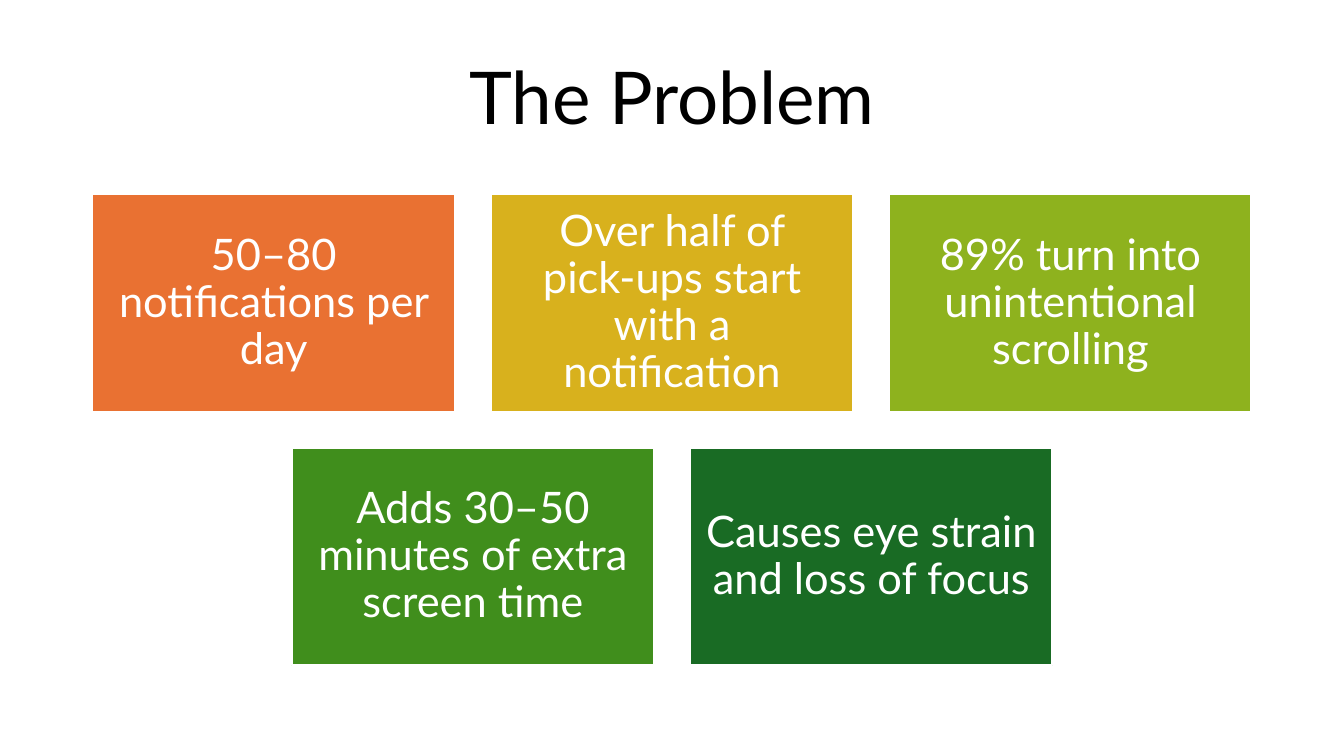
from pptx import Presentation
from pptx.dml.color import RGBColor
from pptx.enum.shapes import MSO_SHAPE as Shape
from pptx.enum.text import MSO_ANCHOR as Anchor, PP_ALIGN as Align
from pptx.util import Cm, Pt

BLACK = RGBColor(0x00, 0x00, 0x00)
WHITE = RGBColor(0xFF, 0xFF, 0xFF)
ORANGE = RGBColor(0xE9, 0x71, 0x32)
GOLD = RGBColor(0xD8, 0xB1, 0x1D)
LIME = RGBColor(0x8E, 0xB2, 0x1E)
GREEN = RGBColor(0x40, 0x8E, 0x1C)
DARK_GREEN = RGBColor(0x19, 0x6B, 0x24)

SLIDE_WIDTH, SLIDE_HEIGHT = 33.87, 19.05
CARD_WIDTH, CARD_HEIGHT, CARD_GAP = 9.13, 5.48, 0.91
CARDS_TOP = 4.9

PROBLEM_ROWS = [
    [
        ("50–80 notifications per day", ORANGE),
        ("Over half of pick‑ups start with a notification", GOLD),
        ("89% turn into unintentional scrolling", LIME),
    ],
    [
        ("Adds 30–50 minutes of extra screen time", GREEN),
        ("Causes eye strain and loss of focus", DARK_GREEN),
    ],
]


class ProblemSlide:
    """Holds the text style and the slide being filled."""

    font_name = "Lato"
    line_spacing = 0.9

    def __init__(self, slide):
        self.slide = slide

    def set_text(self, frame, text, *, size, color, margin):
        """Fill a text frame with one centred paragraph."""
        frame.word_wrap = True
        frame.vertical_anchor = Anchor.MIDDLE
        frame.margin_left = frame.margin_right = Cm(margin)
        frame.margin_top = frame.margin_bottom = Cm(margin)
        paragraph = frame.paragraphs[0]
        paragraph.alignment = Align.CENTER
        paragraph.line_spacing = self.line_spacing
        run = paragraph.add_run()
        run.text = text
        run.font.name = self.font_name
        run.font.size = Pt(size)
        run.font.color.rgb = color

    def title(self, text, left, top, width, height):
        heading = self.slide.shapes.add_textbox(
            Cm(left), Cm(top), Cm(width), Cm(height))
        self.set_text(heading.text_frame, text, size=52, color=BLACK, margin=0.2)

    def card(self, text, color, left, top):
        card = self.slide.shapes.add_shape(
            Shape.RECTANGLE, Cm(left), Cm(top), Cm(CARD_WIDTH), Cm(CARD_HEIGHT))
        card.shadow.inherit = False
        card.fill.solid()
        card.fill.fore_color.rgb = color
        card.line.color.rgb = WHITE
        card.line.width = Pt(1.5)
        self.set_text(card.text_frame, text, size=31, color=WHITE, margin=0.33)

    def card_row(self, problems, top):
        """Place a row of cards centred on the slide."""
        pitch = CARD_WIDTH + CARD_GAP
        left = (SLIDE_WIDTH - len(problems) * pitch + CARD_GAP) / 2
        for column, (text, color) in enumerate(problems):
            self.card(text, color, left + column * pitch, top)


def main():
    deck = Presentation()
    deck.slide_width, deck.slide_height = Cm(SLIDE_WIDTH), Cm(SLIDE_HEIGHT)
    problem = ProblemSlide(deck.slides.add_slide(deck.slide_layouts[6]))
    problem.title("The Problem", 2.33, 0.97, 29.21, 3.15)
    for row, problems in enumerate(PROBLEM_ROWS):
        problem.card_row(problems, CARDS_TOP + row * (CARD_HEIGHT + CARD_GAP))
    deck.save("out.pptx")


if __name__ == "__main__":
    main()
